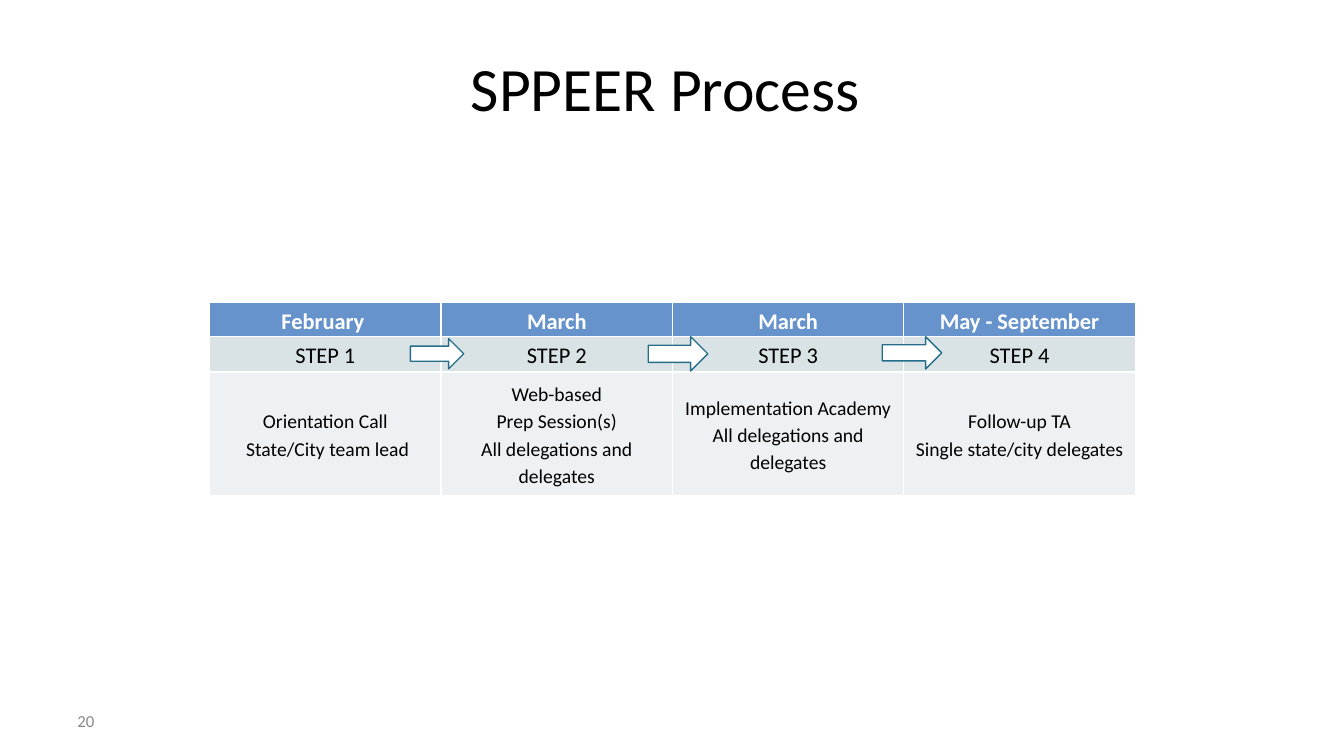
from pptx import Presentation
from pptx.dml.color import RGBColor
from pptx.enum.shapes import MSO_SHAPE
from pptx.enum.text import MSO_ANCHOR, PP_ALIGN
from pptx.util import Inches, Pt

COLORS = {"head": "6793CD", "step": "D9E3E5", "detail": "EDF1F3", "white": "FFFFFF",
          "black": "000000", "gray": "898989", "arrow": "266D8A"}
FONT = "Calibri"

# Row style: fill, height, font size, font colour, bold
ROW_STYLES = [("head", 0.34, 16, "white", True),
              ("step", 0.35, 16, "black", False),
              ("detail", 1.23, 14, "black", False)]
STAGES = [
    ("February ", "STEP 1", "Orientation Call\n State/City team lead"),
    ("March", "STEP 2", "Web-based\nPrep Session(s)\nAll delegations and delegates"),
    ("March", "STEP 3", "Implementation Academy\nAll delegations and delegates"),
    ("May - September", "STEP 4", "Follow-up TA\nSingle state/city delegates"),
]
# Offset from the table's corner, then size
ARROWS = [(1.99, 0.36, 0.53, 0.3), (4.35, 0.34, 0.59, 0.34), (6.67, 0.34, 0.59, 0.32)]


def rgb(name):
    return RGBColor.from_string(COLORS[name])


def set_text(tf, text, size, color, bold=False, align=PP_ALIGN.CENTER, spacing=None):
    tf.text = text
    for p in tf.paragraphs:
        p.alignment = align
        p.line_spacing = spacing
        p.font.name, p.font.size, p.font.bold = FONT, Pt(size), bold
        p.font.color.rgb = rgb(color)


def add_title(s, box):
    title = s.shapes.title
    title.left, title.top, title.width, title.height = map(Inches, box)
    title.text_frame.vertical_anchor = MSO_ANCHOR.MIDDLE
    set_text(title.text_frame, "SPPEER Process ", 44, "black")


def add_page_number(s, box):
    tf = s.shapes.add_textbox(*map(Inches, box)).text_frame
    tf.word_wrap = True
    tf.vertical_anchor = MSO_ANCHOR.MIDDLE
    set_text(tf, "20", 12, "gray", align=PP_ALIGN.LEFT)


def add_process(s, box):
    left, top, width, _ = box
    table = s.shapes.add_table(len(ROW_STYLES), len(STAGES), *map(Inches, box)).table
    for col in table.columns:
        col.width = Inches(width / len(STAGES))

    # Stage cells
    for i, (fill, height, size, color, bold) in enumerate(ROW_STYLES):
        table.rows[i].height = Inches(height)
        for j, stage in enumerate(STAGES):
            cell = table.cell(i, j)
            cell.fill.solid()
            cell.fill.fore_color.rgb = rgb(fill)
            cell.vertical_anchor = MSO_ANCHOR.MIDDLE
            cell.margin_left = cell.margin_right = Inches(0.07)
            cell.margin_top = cell.margin_bottom = 0
            set_text(cell.text_frame, stage[i], size, color, bold, spacing=1.15)

    # Arrows between the steps
    for dx, dy, w, h in ARROWS:
        sp = s.shapes.add_shape(MSO_SHAPE.RIGHT_ARROW, Inches(left + dx), Inches(top + dy),
                                Inches(w), Inches(h))
        sp.shadow.inherit = False
        sp.fill.solid()
        sp.fill.fore_color.rgb = rgb("white")
        sp.line.color.rgb = rgb("arrow")
        sp.line.width = Pt(1)


def main():
    prs = Presentation()
    prs.slide_width, prs.slide_height = Inches(13.33), Inches(7.5)
    s = prs.slides.add_slide(prs.slide_layouts[5])
    add_title(s, (0.67, 0.3, 12, 1.12))
    add_page_number(s, (0.67, 6.95, 3.11, 0.4))
    add_process(s, (2.08, 3, 9.18, 1.92))
    prs.save("out.pptx")


if __name__ == "__main__":
    main()
